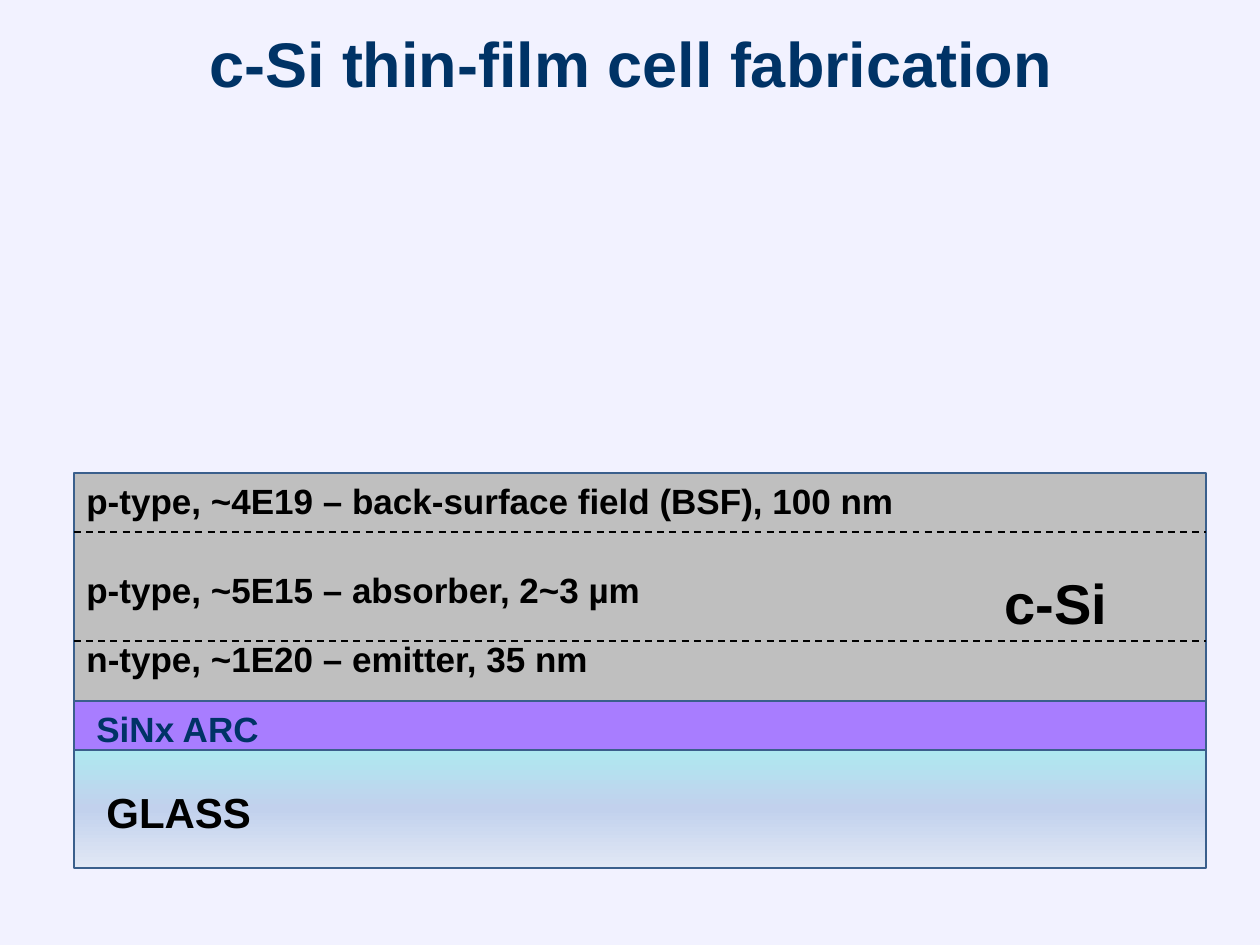
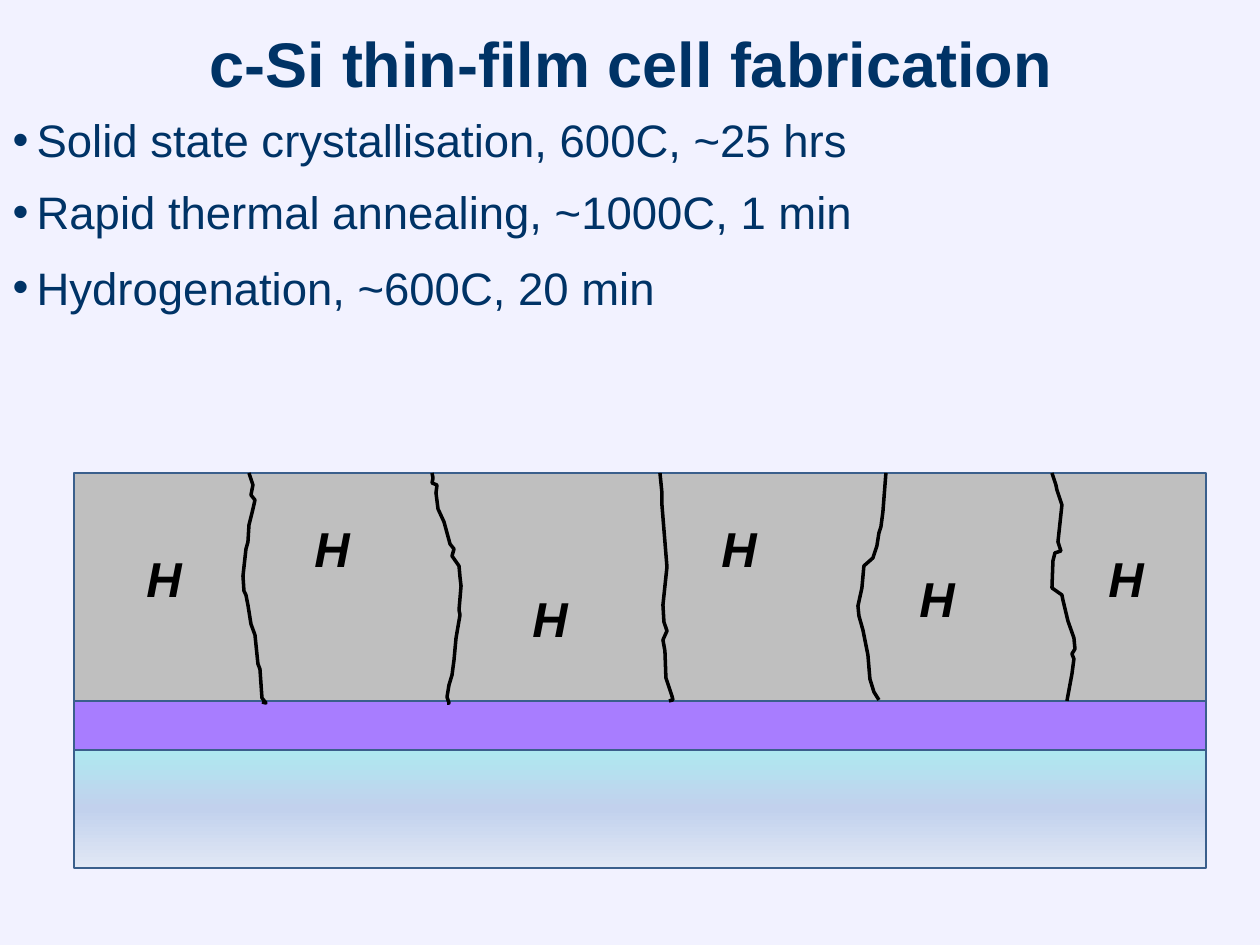
from copy import deepcopy
from itertools import accumulate

from lxml.etree import SubElement
from pptx import Presentation
from pptx.dml.color import RGBColor
from pptx.enum.dml import MSO_LINE
from pptx.enum.shapes import MSO_CONNECTOR, MSO_SHAPE
from pptx.enum.text import MSO_ANCHOR, MSO_AUTO_SIZE, PP_ALIGN
from pptx.oxml.ns import qn
from pptx.util import Pt

SCALE = 914400 / 126
SLIDE_WIDTH, SLIDE_HEIGHT = 1260, 945
FONT = "Arial"
BACKGROUND, NAVY, BLACK = "F2F2FF", "003366", "000000"
OUTLINE, SILICON, NITRIDE = "3A5F8C", "BFBFBF", "A87DFF"
GLASS = ((0, "AEE8F0"), (0.5, "C2D1ED"), (1, "E1E8F5"))
TITLE_ONLY, TITLE_AND_BODY = 5, 1

STACK_LEFT, STACK_WIDTH, STACK_TOP = 74, 1132, 473
LAYER_HEIGHTS = (228, 49, 118)
SILICON_TOP, NITRIDE_TOP, GLASS_TOP = accumulate(LAYER_HEIGHTS[:-1], initial=STACK_TOP)

LAYER_LABELS = (
    ("c-Si", 992, 562, 188, 81, 32, BLACK),
    ("p-type, ~4E19 – back-surface field (BSF), 100 nm", STACK_LEFT, SILICON_TOP, 833, 55, 20, BLACK),
    ("p-type, ~5E15 – absorber, 2~3 µm", STACK_LEFT, 562, 590, 55, 20, BLACK),
    ("n-type, ~1E20 – emitter, 35 nm", STACK_LEFT, 631, 546, 55, 20, BLACK),
    ("SiNx ARC", 84, NITRIDE_TOP, 268, 55, 20, NAVY),
    ("GLASS", 94, 780, 179, 63, 24, BLACK),
)
JUNCTION_HEIGHTS = (532, 641)

PROCESS_STEPS = (
    ("Solid state crystallisation, 600C, ~25 hrs", 0),
    ("Rapid thermal annealing, ~1000C, 1 min", 10),
    ("Hydrogenation, ~600C, 20 min", 12),
)
HYDROGEN_POSITIONS = ((134, 542), (302, 512), (520, 582), (709, 512), (907, 562), (1096, 542))
GRAIN_BOUNDARIES = (
    ((249, 473), (253, 485), (251, 495), (255, 500), (253, 509), (249, 525), (248, 542),
     (246, 549), (243, 576), (244, 591), (246, 595), (248, 605), (251, 624), (255, 635),
     (258, 664), (260, 669), (262, 698), (266, 703), (262, 702)),
    ((432, 473), (433, 478), (432, 483), (437, 485), (436, 493), (438, 509), (444, 522),
     (450, 544), (454, 549), (452, 556), (459, 566), (460, 577), (461, 586), (459, 610),
     (460, 615), (456, 638), (454, 660), (452, 675), (449, 685), (447, 697), (449, 703),
     (447, 703)),
    ((660, 473), (662, 493), (662, 505), (667, 567), (663, 605), (664, 622), (667, 631),
     (663, 640), (665, 651), (666, 678), (669, 687), (672, 696), (673, 700), (669, 701)),
    ((886, 473), (883, 512), (881, 527), (879, 533), (877, 546), (873, 558), (864, 566),
     (862, 588), (858, 606), (859, 616), (863, 630), (868, 655), (870, 679), (874, 692),
     (879, 700)),
    ((1052, 473), (1056, 485), (1057, 490), (1062, 505), (1058, 542), (1061, 551),
     (1055, 553), (1053, 561), (1052, 588), (1062, 595), (1063, 600), (1068, 621),
     (1074, 638), (1075, 649), (1072, 654), (1074, 659), (1072, 674), (1067, 701)),
)


def color(hex_string):
    return RGBColor.from_string(hex_string)


def emu(*pixels):
    return [round(pixel * SCALE) for pixel in pixels]


class Deck:
    def __init__(self):
        self.presentation = Presentation()
        self.presentation.slide_width, self.presentation.slide_height = emu(SLIDE_WIDTH, SLIDE_HEIGHT)
        background = self.presentation.slide_master.background.fill
        background.solid()
        background.fore_color.rgb = color(BACKGROUND)
        self.slide = None

    def add_slide(self, layout, title):
        self.slide = self.presentation.slides.add_slide(self.presentation.slide_layouts[layout])
        for placeholder in list(self.slide.placeholders):
            if placeholder.placeholder_format.idx > 1:
                placeholder._element.getparent().remove(placeholder._element)
        shape = self.slide.shapes.title
        self.place(shape, 64, 0, 1134, 125)
        shape.text_frame.vertical_anchor = MSO_ANCHOR.MIDDLE
        paragraph = shape.text_frame.paragraphs[0]
        paragraph.text = title
        paragraph.alignment = PP_ALIGN.CENTER
        self.style(paragraph, 36, NAVY, bold=True)

    def place(self, shape, *box):
        shape.left, shape.top, shape.width, shape.height = emu(*box)
        shape.text_frame.auto_size = MSO_AUTO_SIZE.NONE

    def style(self, paragraph, size, ink, bold=False, italic=False):
        font = paragraph.font
        font.name, font.size, font.bold, font.italic = FONT, Pt(size), bold, italic
        font.color.rgb = color(ink)

    def stroke(self, line, ink, width):
        line.color.rgb = color(ink)
        line.width = Pt(width)

    def text(self, content, left, top, width, height, size, ink, italic=False):
        frame = self.slide.shapes.add_textbox(*emu(left, top, width, height)).text_frame
        frame.word_wrap = True
        paragraph = frame.paragraphs[0]
        paragraph.text = content
        self.style(paragraph, size, ink, bold=True, italic=italic)

    def bullets(self, items, *box):
        shape = self.slide.placeholders[1]
        self.place(shape, *box)
        frame = shape.text_frame
        for index, (content, gap) in enumerate(items):
            paragraph = frame.add_paragraph() if index else frame.paragraphs[0]
            paragraph.text = content
            paragraph.space_before = Pt(gap)
            self.style(paragraph, 26, NAVY)
            properties = paragraph._p.get_or_add_pPr()
            indent, = emu(24)
            properties.set("marL", str(indent))
            properties.set("indent", str(-indent))
            SubElement(properties, qn("a:buChar")).set("char", "•")
            properties.append(properties.find(qn("a:defRPr")))

    def layer(self, top, height):
        shape = self.slide.shapes.add_shape(
            MSO_SHAPE.RECTANGLE, *emu(STACK_LEFT, top, STACK_WIDTH, height))
        shape.shadow.inherit = False
        self.stroke(shape.line, OUTLINE, 1)
        return shape

    def solid_layer(self, top, height, paint):
        fill = self.layer(top, height).fill
        fill.solid()
        fill.fore_color.rgb = color(paint)

    def gradient_layer(self, top, height, stops):
        shape = self.layer(top, height)
        shape.fill.gradient()
        shape.fill.gradient_angle = 270
        first = shape._element.spPr.find(f".//{qn('a:gs')}")
        first.addnext(deepcopy(first))
        for stop, (position, paint) in zip(shape.fill.gradient_stops, stops):
            stop.position = position
            stop.color.rgb = color(paint)

    def cell_stack(self):
        silicon_height, nitride_height, glass_height = LAYER_HEIGHTS
        self.gradient_layer(GLASS_TOP, glass_height, GLASS)
        self.solid_layer(SILICON_TOP, silicon_height, SILICON)
        self.solid_layer(NITRIDE_TOP, nitride_height, NITRIDE)

    def dashed_line(self, height):
        connector = self.slide.shapes.add_connector(
            MSO_CONNECTOR.STRAIGHT, *emu(STACK_LEFT, height, STACK_LEFT + STACK_WIDTH, height))
        self.stroke(connector.line, BLACK, 1)
        connector.line.dash_style = MSO_LINE.DASH
        SubElement(connector._element.spPr, qn("a:effectLst"))

    def outline(self, points):
        builder = self.slide.shapes.build_freeform(*points[0], scale=SCALE)
        builder.add_line_segments(points[1:], close=False)
        shape = builder.convert_to_shape()
        shape.shadow.inherit = False
        shape.fill.background()
        self.stroke(shape.line, BLACK, 2)


def main():
    deck = Deck()
    title = "c-Si thin-film cell fabrication"

    deck.add_slide(TITLE_ONLY, title)
    deck.cell_stack()
    for height in JUNCTION_HEIGHTS:
        deck.dashed_line(height)
    for label in LAYER_LABELS:
        deck.text(*label)

    deck.add_slide(TITLE_AND_BODY, title)
    deck.bullets(PROCESS_STEPS, 0, 106, 968, 210)
    deck.cell_stack()
    for boundary in GRAIN_BOUNDARIES:
        deck.outline(boundary)
    for left, top in HYDROGEN_POSITIONS:
        deck.text("H", left, top, 79, 72, 28, BLACK, italic=True)

    deck.presentation.save("out.pptx")


if __name__ == "__main__":
    main()
